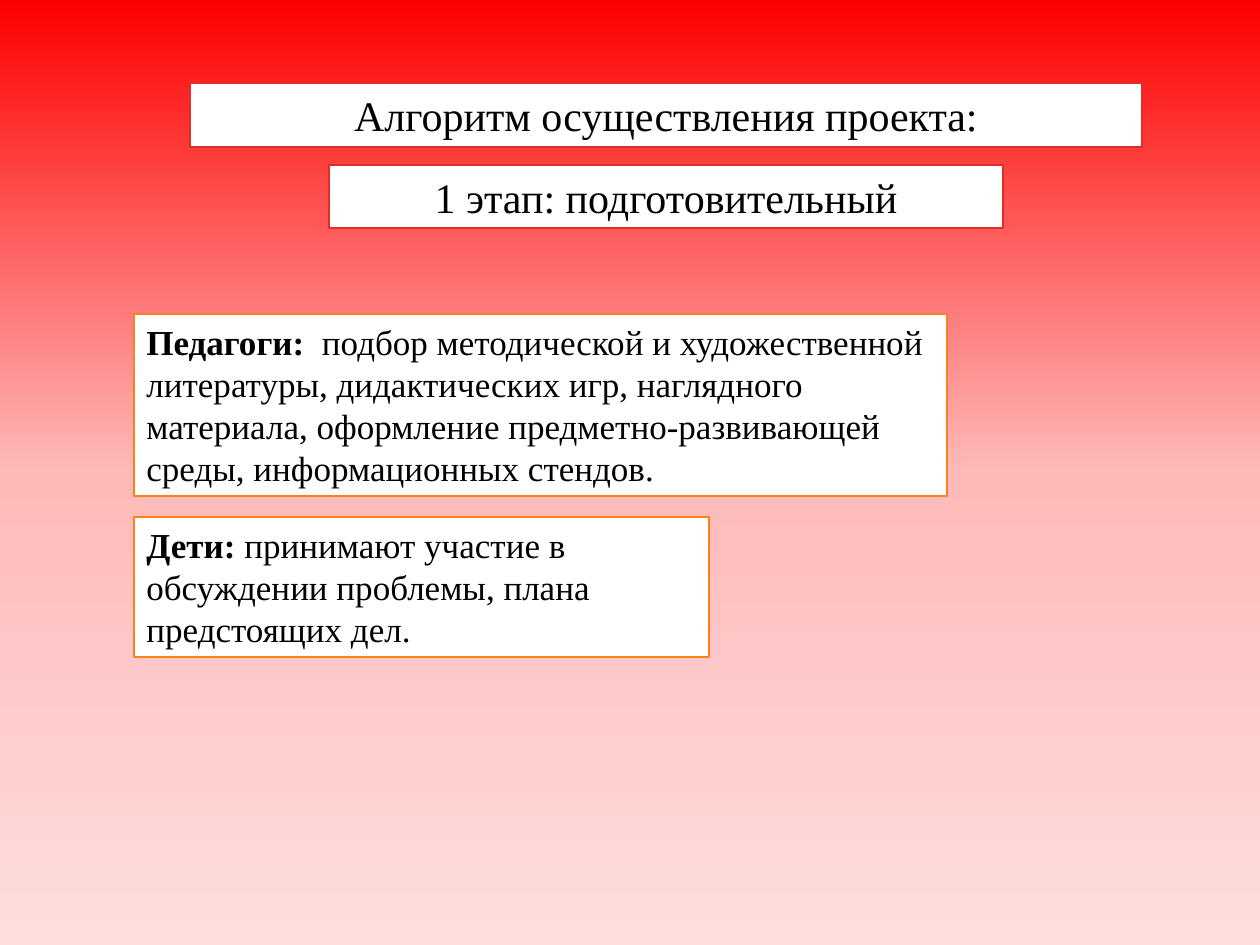
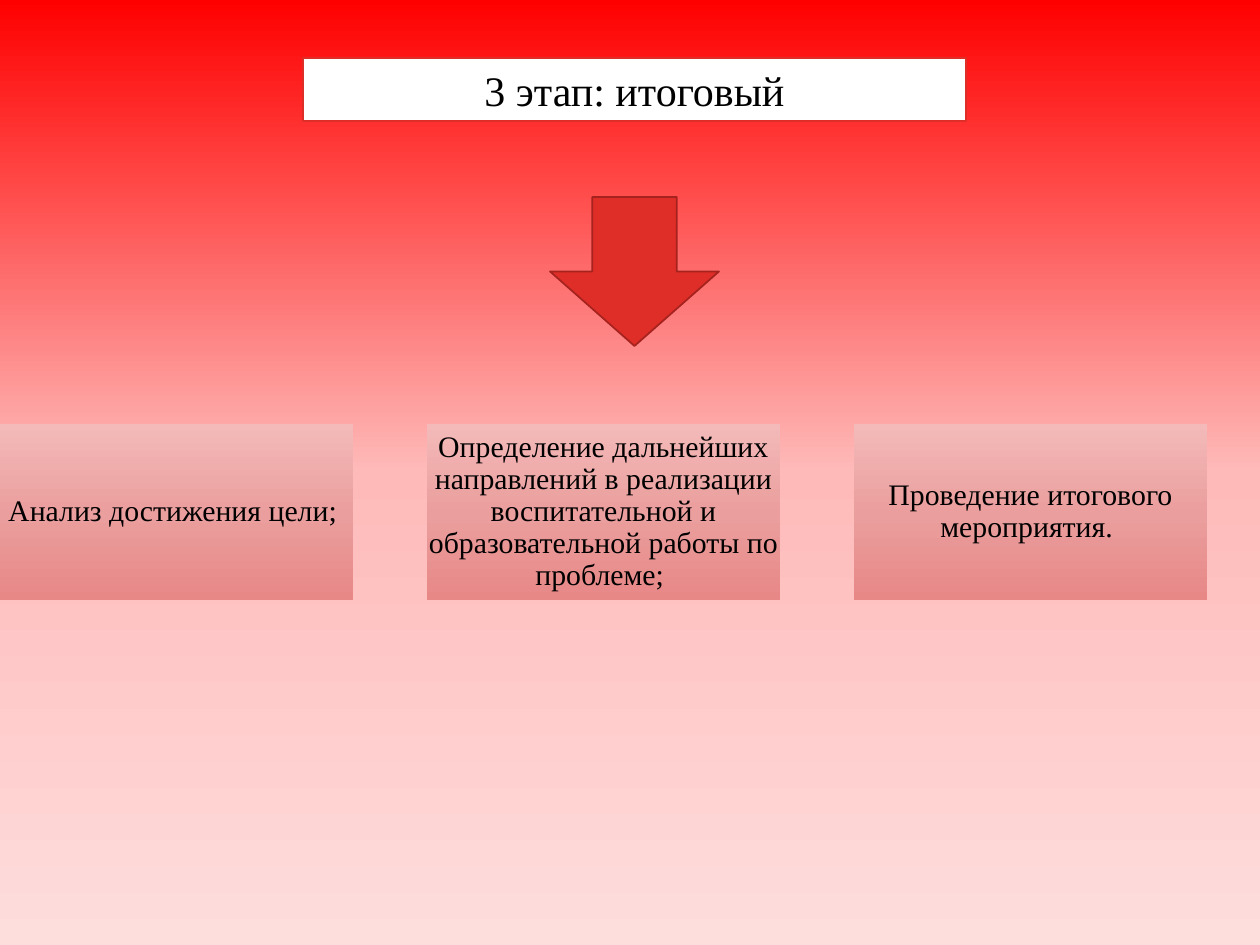
import copy

import pptx
import pptx.dml.color
import pptx.enum.shapes
import pptx.enum.text
import pptx.oxml.ns
import pptx.util

PX = 914400 // 126
FONT = "Times New Roman"
COLORS = {
    "ink": "000000",
    "paper": "FFFFFF",
    "red": "DF2E28",
    "dark_red": "A5221E",
    "orange": "FE801A",
}
BACKDROP = [(0, "FF0000"), (50, "FEBAB9"), (100, "FEDDDD")]
CARD_SHADE = [(0, "F3BAB9"), (52, "EA9E9D"), (100, "E78887")]

SHAPES = pptx.enum.shapes.MSO_SHAPE
ALIGN = pptx.enum.text.PP_ALIGN
ANCHOR = pptx.enum.text.MSO_ANCHOR
HEADING = {"size": 24, "align": ALIGN.CENTER}
BODY = {"size": 20, "align": ALIGN.LEFT}
CARD = {"size": 17, "align": ALIGN.CENTER, "spacing": 0.9,
        "anchor": ANCHOR.MIDDLE, "margin": 1}


def px(value):
    return pptx.util.Emu(value * PX)


def rgb(name):
    return pptx.dml.color.RGBColor.from_string(COLORS[name])


class Deck:
    """Holds the shared style and the slide being built."""

    def __init__(self):
        self.prs = pptx.Presentation()
        self.prs.slide_width = pptx.util.Inches(10)
        self.prs.slide_height = pptx.util.Inches(7.5)
        self.slide = None

    def new_slide(self, title, box):
        self.slide = self.prs.slides.add_slide(self.prs.slide_layouts[5])
        self.gradient(self.slide.background.fill, self.slide._element, BACKDROP)
        heading = self.slide.shapes.title
        for side, value in zip(("left", "top", "width", "height"), box):
            setattr(heading, side, px(value))
        self.paint(heading, "paper", "red")
        self.set_text(heading, [(title, False)], HEADING)

    def gradient(self, fill, element, stops):
        """Fill from top to bottom with any number of colour stops."""
        fill.gradient()
        fill.gradient_angle = 270
        stop_list = element.find(".//" + pptx.oxml.ns.qn("a:gsLst"))
        while len(stop_list) < len(stops):
            stop_list.append(copy.deepcopy(stop_list[0]))
        for stop, (position, color) in zip(fill.gradient_stops, stops):
            stop.position = position / 100
            stop.color.rgb = pptx.dml.color.RGBColor.from_string(color)

    def paint(self, shape, fill, line):
        shape.fill.solid()
        shape.fill.fore_color.rgb = rgb(fill)
        shape.line.color.rgb = rgb(line)
        shape.line.width = pptx.util.Pt(1)

    def set_text(self, shape, runs, style):
        frame = shape.text_frame
        layout = {"word_wrap": True,
                  "auto_size": pptx.enum.text.MSO_AUTO_SIZE.NONE,
                  "vertical_anchor": style.get("anchor", ANCHOR.TOP)}
        if "margin" in style:
            for side in ("left", "top", "right", "bottom"):
                layout["margin_" + side] = px(style["margin"])
        for name, value in layout.items():
            setattr(frame, name, value)
        paragraph = frame.paragraphs[0]
        paragraph.alignment = style["align"]
        paragraph.line_spacing = style.get("spacing", 1.0)
        for text, bold in runs:
            run = paragraph.add_run()
            run.text = text
            font = {"name": FONT, "size": pptx.util.Pt(style["size"]), "bold": bold}
            for name, value in font.items():
                setattr(run.font, name, value)
            run.font.color.rgb = rgb("ink")

    def shape(self, kind, box):
        shape = self.slide.shapes.add_shape(kind, *map(px, box))
        shape.shadow.inherit = False
        return shape

    def panel(self, box, runs, line, style):
        panel = self.shape(SHAPES.RECTANGLE, box)
        self.paint(panel, "paper", line)
        self.set_text(panel, runs, style)

    def card(self, box, text):
        card = self.shape(SHAPES.RECTANGLE, box)
        self.gradient(card.fill, card._element, CARD_SHADE)
        card.line.fill.background()
        self.set_text(card, [(text, False)], CARD)

    def down_arrow(self, box):
        self.paint(self.shape(SHAPES.DOWN_ARROW, box), "red", "dark_red")


def preparation_slide(deck):
    deck.new_slide("Алгоритм осуществления проекта:", (190, 83, 952, 64))
    deck.panel((329, 165, 674, 63), [("1 этап: подготовительный", False)],
               "red", HEADING)

    # Who does what
    teachers = [("Педагоги:  ", True),
                ("подбор методической и художественной литературы, "
                 "дидактических игр, наглядного материала, оформление "
                 "предметно-развивающей среды, информационных стендов.", False)]
    children = [("Дети:", True),
                (" принимают участие в обсуждении проблемы, "
                 "плана предстоящих дел.", False)]
    deck.panel((134, 314, 813, 182), teachers, "orange", BODY)
    deck.panel((134, 517, 575, 140), children, "orange", BODY)


def final_slide(deck):
    deck.new_slide("3 этап: итоговый", (303, 58, 663, 63))
    deck.down_arrow((550, 197, 169, 149))

    # Row of closing steps
    steps = ["Анализ достижения цели; ",
             "Определение дальнейших направлений в реализации "
             "воспитательной и образовательной работы по проблеме; ",
             "Проведение итогового мероприятия. "]
    card_width, gap = 353, 74
    for index, step in enumerate(steps):
        deck.card((index * (card_width + gap), 424, card_width, 176), step)


def main():
    deck = Deck()
    preparation_slide(deck)
    final_slide(deck)
    deck.prs.save("out.pptx")


if __name__ == "__main__":
    main()
